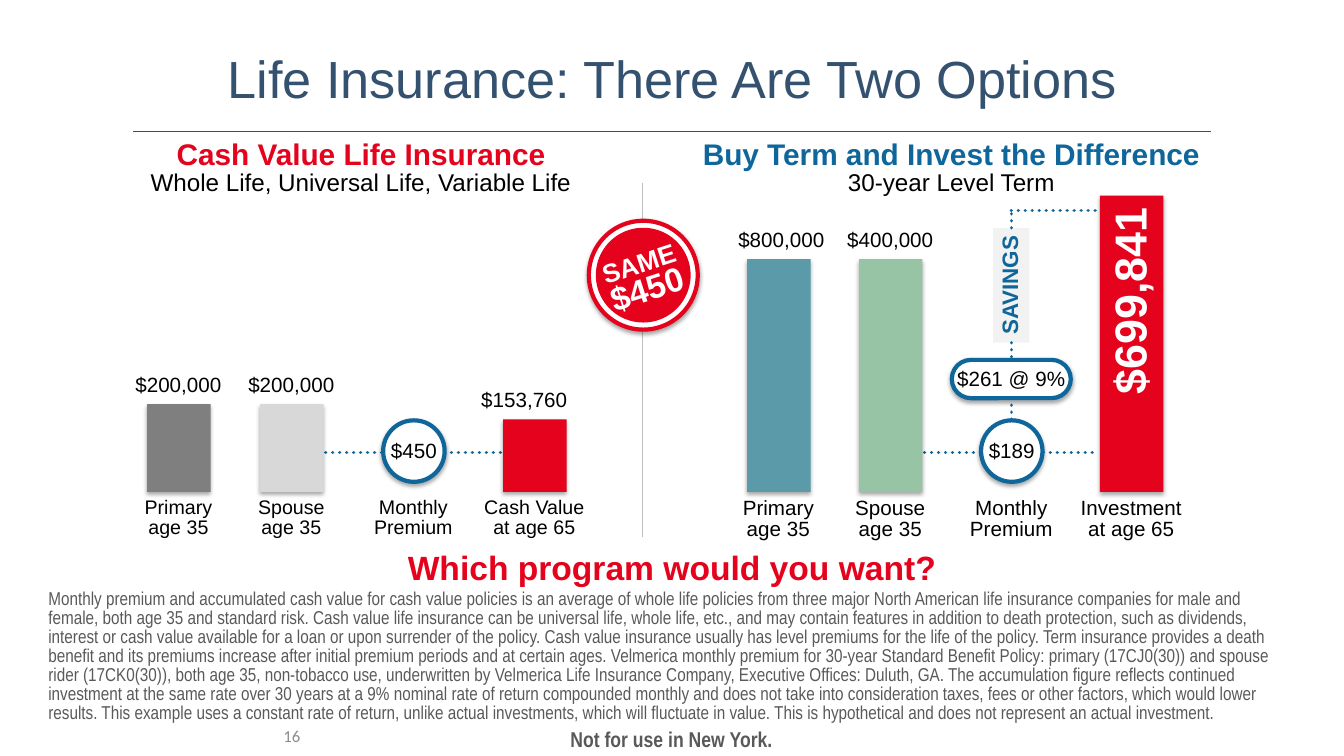
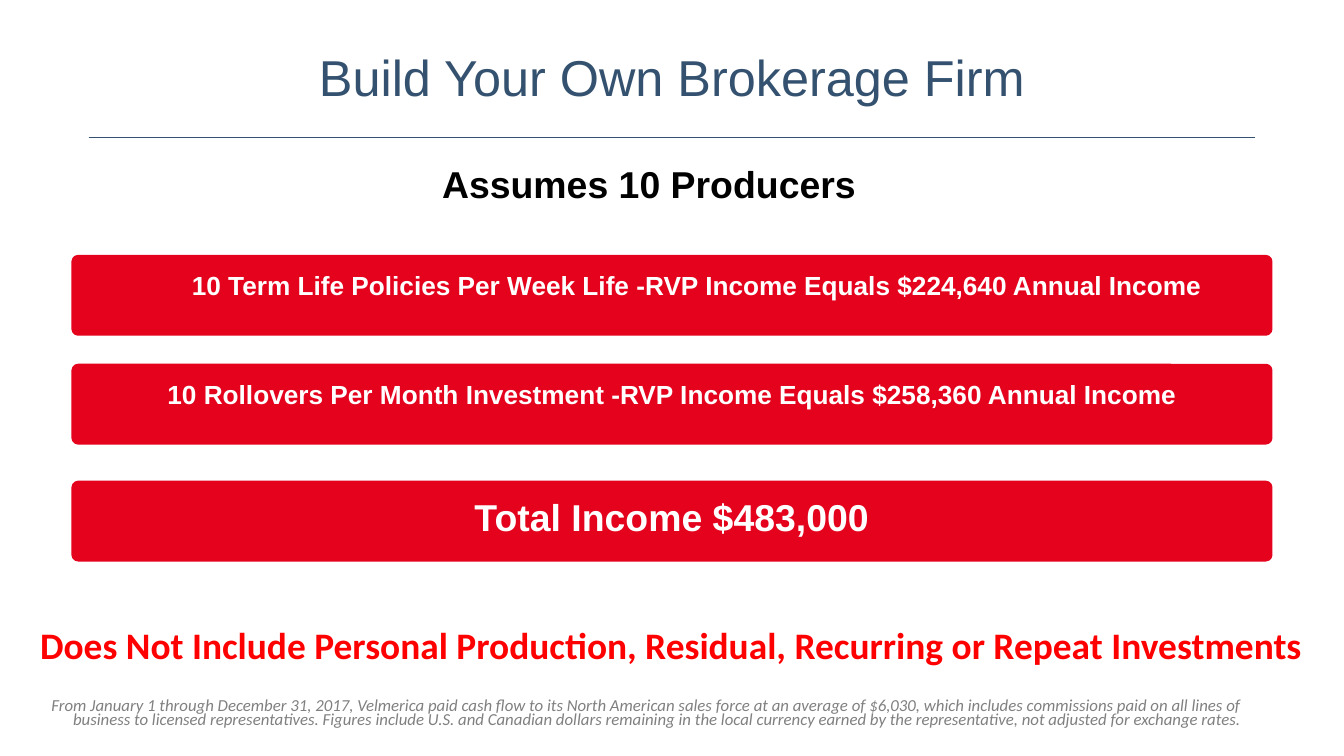
from lxml import etree
from pptx import Presentation
from pptx import util as u
from pptx.dml.color import RGBColor
from pptx.enum import dml, shapes, text
from pptx.oxml import parse_xml
from pptx.oxml.ns import nsdecls, qn

PX = 9144  # EMU per px, 100 px to the inch
WIDTH, HEIGHT = 1333, 750
COLORS = {
    "navy": "34526F", "red": "E4021D", "blue": "0E669A", "alert": "FF0000",
    "black": "000000", "white": "FFFFFF", "note": "595959", "footnote": "808080",
    "number": "8C8C8C", "divider": "BFBFBF", "tag": "F2F2F2",
    "gray": "7F7F7F", "light": "D8D8D8", "teal": "5B9BA9", "green": "97C4A4",
}
LEFT, CENTER, RIGHT = text.PP_ALIGN.LEFT, text.PP_ALIGN.CENTER, text.PP_ALIGN.RIGHT
TOP, MIDDLE = text.MSO_ANCHOR.TOP, text.MSO_ANCHOR.MIDDLE
RECT, ROUND, OVAL = (shapes.MSO_SHAPE.RECTANGLE, shapes.MSO_SHAPE.ROUNDED_RECTANGLE,
                     shapes.MSO_SHAPE.OVAL)
SHADOW = (
    f'<a:effectLst {nsdecls("a")}><a:outerShdw blurRad="39370" dist="22860" dir="5400000" '
    'algn="ctr" rotWithShape="0"><a:srgbClr val="000000"><a:alpha val="35000"/></a:srgbClr>'
    '</a:outerShdw></a:effectLst>')
SMALL_PRINT = [
    "Monthly premium and accumulated cash value for cash value policies is an average of "
    "whole life policies from three major North American life insurance companies for male "
    "and female, both age 35 and standard risk.",
    "Cash value life insurance can be universal life, whole life, etc., and may contain "
    "features in addition to death protection, such as dividends, interest or cash value "
    "available for a loan or upon surrender of the policy.",
    "Cash value insurance usually has level premiums for the life of the policy.",
    "Term insurance provides a death benefit and its premiums increase after initial premium "
    "periods and at certain ages.",
    "Velmerica monthly premium for 30-year Standard Benefit Policy: primary (17CJ0(30)) and "
    "spouse rider (17CK0(30)), both age 35, non-tobacco use, underwritten by Velmerica Life "
    "Insurance Company, Executive Offices: Duluth, GA.",
    "The accumulation figure reflects continued investment at the same rate over 30 years at a "
    "9% nominal rate of return compounded monthly and does not take into consideration taxes, "
    "fees or other factors, which would lower results.",
    "This example uses a constant rate of return, unlike actual investments, which will "
    "fluctuate in value.",
    "This is hypothetical and does not represent an actual investment.",
]


def rgb(name):
    return RGBColor.from_string(COLORS[name])


def emu(*lengths):
    return [u.Emu(round(length * PX)) for length in lengths]


def write(shape, content, size, color="black", font="Arial", bold=False, italic=False,
          align=CENTER, anchor=TOP, spacing=0.85, insets=(13, 7, 13, 7), wrap=True):
    """Fill a shape with text; size may list one value per line."""
    frame = shape.text_frame
    frame.text = content
    frame.word_wrap = wrap
    frame.vertical_anchor = anchor
    (frame.margin_left, frame.margin_top,
     frame.margin_right, frame.margin_bottom) = emu(*insets)
    for index, paragraph in enumerate(frame.paragraphs):
        paragraph.alignment = align
        paragraph.line_spacing = spacing
        for run in paragraph.runs:
            run.font.name = font
            run.font.size = u.Pt(size[index] if isinstance(size, tuple) else size)
            run.font.bold, run.font.italic = bold, italic
            run.font.color.rgb = rgb(color)


def add_text(slide, box, content, size, color="black", rotation=0, **style):
    shape = slide.shapes.add_textbox(*emu(*box))
    shape.rotation = rotation
    write(shape, content, size, color, **style)
    return shape


def add_block(slide, kind, box, fill, line=None, shadow=False, corner=None):
    shape = slide.shapes.add_shape(kind, *emu(*box))
    shape.fill.solid()
    shape.fill.fore_color.rgb = rgb(fill)
    if line:
        shape.line.color.rgb = rgb(line)
        shape.line.width = u.Pt(3)
    else:
        shape.line.fill.background()
    if corner is not None:
        shape.adjustments[0] = corner
    shape.shadow.inherit = False
    if shadow:
        properties = shape.element.spPr
        properties.replace(properties.find(qn("a:effectLst")), parse_xml(SHADOW))
    return shape


def add_line(slide, start, end, color, width=0.75, dotted=False):
    line = slide.shapes.add_connector(shapes.MSO_CONNECTOR.STRAIGHT, *emu(*start, *end))
    line.line.color.rgb = rgb(color)
    line.line.width = u.Pt(width)
    properties = line.element.spPr
    if dotted:
        line.line.dash_style = dml.MSO_LINE.ROUND_DOT
        properties.find(qn("a:ln")).set("cap", "rnd")
    etree.SubElement(properties, qn("a:effectLst"))
    return line


def add_dots(slide, start, end):
    return add_line(slide, start, end, "blue", 2.5, dotted=True)


def add_title(slide, box, content, size, rule_y, rule_inset):
    add_text(slide, box, content, size, "navy")
    add_line(slide, (rule_inset, rule_y), (WIDTH - rule_inset, rule_y), "navy")


def add_option(slide, box, heading, detail, color, columns, label_size):
    """One insurance option: heading, bars on a baseline and the premium circle."""
    left, top, width, _ = box
    baseline = top + 355
    title = add_text(slide, (left, top, width, 70), f"{heading}\n{detail}", (21.3, 17.3), color)
    for paragraph, shade, bold in zip(title.text_frame.paragraphs,
                                      (color, "black"), (True, False)):
        paragraph.runs[0].font.color.rgb = rgb(shade)
        paragraph.runs[0].font.bold = bold

    # Dotted line from the spouse bar to the result bar, behind the circle
    add_dots(slide, (left + columns[1][0] + 34, baseline - 39),
             (left + columns[3][0] - 32, baseline - 39))
    for offset, height, fill, value, value_shift, label in columns:
        center = left + offset
        add_text(slide, (center - 67, baseline, 134, 54), label, label_size)
        if fill is None:
            circle = add_block(slide, OVAL, (center - 30, baseline - 71, 61, 61),
                               "white", "blue", shadow=True)
            write(circle, value, 14.7, anchor=MIDDLE, insets=(0, 3, 0, 0), wrap=False)
            continue
        bar_top = baseline - height
        add_block(slide, RECT, (center - 31, bar_top, 63, height), fill, shadow=True)
        if value:
            add_text(slide, (center - 67 + value_shift, bar_top - 35, 134, 35), value, 14.7)


def add_savings(slide, box):
    """The savings path that climbs from the premium circle to the investment bar."""
    left, top, width, height = box
    center, right = left + 59, left + width
    tag = add_block(slide, RECT, (center - 18, top + 32, 36, 114), "tag")
    write(tag, "SAVINGS", 16, "blue", bold=True, anchor=MIDDLE, insets=(0, 0, 0, 0), wrap=False)
    tag.element.txBody.bodyPr.set("vert", "vert270")
    pill = add_block(slide, ROUND, (left, top + 163, 118, 38), "white", "blue",
                     shadow=True, corner=0.5)
    write(pill, "$261 @ 9%", 14.7, anchor=MIDDLE, insets=(0, 3, 0, 0), wrap=False)

    corner = (center, top + 15)
    add_dots(slide, corner, (right, top + 15))
    add_dots(slide, (center, top + 32), corner).begin_connect(tag, 0)
    link = add_dots(slide, (center, top + 146), (center, top + 163))
    link.begin_connect(tag, 2)
    link.end_connect(pill, 0)
    add_dots(slide, (center, top + 201), (center, top + height)).begin_connect(pill, 2)

    add_text(slide, (right - 85, top + 87, 233, 57), "$699,841", 32, "white",
             rotation=270, bold=True, align=RIGHT)


def add_badge(slide, box):
    left, top, size, _ = box
    add_block(slide, OVAL, box, "white", "red", shadow=True)
    add_block(slide, OVAL, (left + 7, top + 7, size - 14, size - 14), "red")
    add_text(slide, (left - 3, top + 26, size + 5, 57), "SAME\n$450", (18.7, 24), "white",
             rotation=342.1, bold=True, spacing=0.75)


def build_options(slide):
    add_title(slide, (105, 48, 1124, 74), "Life Insurance: There Are Two Options", 37.3, 130, 132)
    add_line(slide, (637, 182), (637, 533), "divider")

    # Columns: centre, bar height, fill, value, value shift, label
    add_option(slide, (105, 133, 506, 409), "Cash Value Life Insurance",
               "Whole Life, Universal Life, Variable Life", "red", [
                   (72, 87, "gray", "$200,000", 0, "Primary\nage 35"),
                   (184, 87, "light", "$200,000", 0, "Spouse\nage 35"),
                   (305, 0, None, "$450", 0, "Monthly\nPremium"),
                   (425, 72, "red", "$153,760", -10, "Cash Value\nat age 65")], 14)
    add_option(slide, (605, 133, 677, 409), "Buy Term and Invest the Difference",
               "30-year Level Term", "blue", [
                   (167, 231, "teal", "$800,000", 3, "Primary\nage 35"),
                   (278, 231, "green", "$400,000", 0, "Spouse\nage 35"),
                   (398, 0, None, "$189", 0, "Monthly\nPremium"),
                   (517, 294, "red", None, 0, "Investment\nat age 65")], 14.7)
    add_savings(slide, (944, 194, 147, 223))
    add_badge(slide, (584, 219, 108, 108))

    # Question and small print
    add_text(slide, (0, 533, WIDTH, 65), "Which program would you want?", 24, "red",
             bold=True, anchor=MIDDLE)
    add_text(slide, (35, 579, 1257, 147), " ".join(SMALL_PRINT), 13.3, "note",
             font="Arial Narrow", align=LEFT)
    add_text(slide, (434, 717, 464, 33), "Not for use in New York.", 15.3, "note",
             font="Arial Narrow", bold=True)
    add_text(slide, (0, 710, 311, 40), "16", 12, "number", font="Calibri",
             align=RIGHT, anchor=MIDDLE, spacing=1.0)


def add_income_bar(slide, box, content, size, left_inset, top_inset):
    bar = add_block(slide, ROUND, box, "red", "red", corner=0.06)
    write(bar, content, size, "white", bold=True, spacing=1.0,
          insets=(left_inset, top_inset, 0, 0))


def build_income(slide):
    add_title(slide, (44, 48, 1245, 74), "Build Your Own Brokerage Firm", 36, 136, 88)
    add_text(slide, (56, 160, 1176, 62), "Assumes 10 Producers", 26.7, bold=True)

    # Bars: top, text, size, left inset, top inset
    for top, content, size, left_inset, top_inset in [
            (255, "10 Term Life Policies Per Week Life -RVP Income Equals $224,640 Annual Income",
             18.7, 49, 11),
            (363, "10 Rollovers Per Month Investment -RVP Income Equals $258,360 Annual Income",
             18.7, 0, 11),
            (479, "Total Income $483,000", 26.7, 0, 10)]:
        add_income_bar(slide, (73, top, 1187, 76), content, size, left_inset, top_inset)

    # Caveat and footnote
    add_text(slide, (0, 610, WIDTH, 65),
             "Does Not Include Personal Production, Residual, Recurring or Repeat Investments",
             26.7, "alert", font="Calibri", bold=True, anchor=MIDDLE)
    add_text(slide, (36, 689, 1209, 40), (
        "From January 1 through December 31, 2017, Velmerica paid cash flow to its North American "
        "sales force at an average of $6,030, which includes commissions paid on all lines of "
        "business to licensed representatives. Figures include U.S. and Canadian dollars "
        "remaining in the local currency earned by the representative, not adjusted for "
        "exchange rates."),
        12, "footnote", font="Calibri", italic=True, align=RIGHT, anchor=MIDDLE,
        spacing=u.Pt(10))


def main():
    presentation = Presentation()
    presentation.slide_width, presentation.slide_height = emu(WIDTH, HEIGHT)
    for build in (build_options, build_income):
        build(presentation.slides.add_slide(presentation.slide_layouts[6]))
    presentation.save("out.pptx")


if __name__ == "__main__":
    main()
